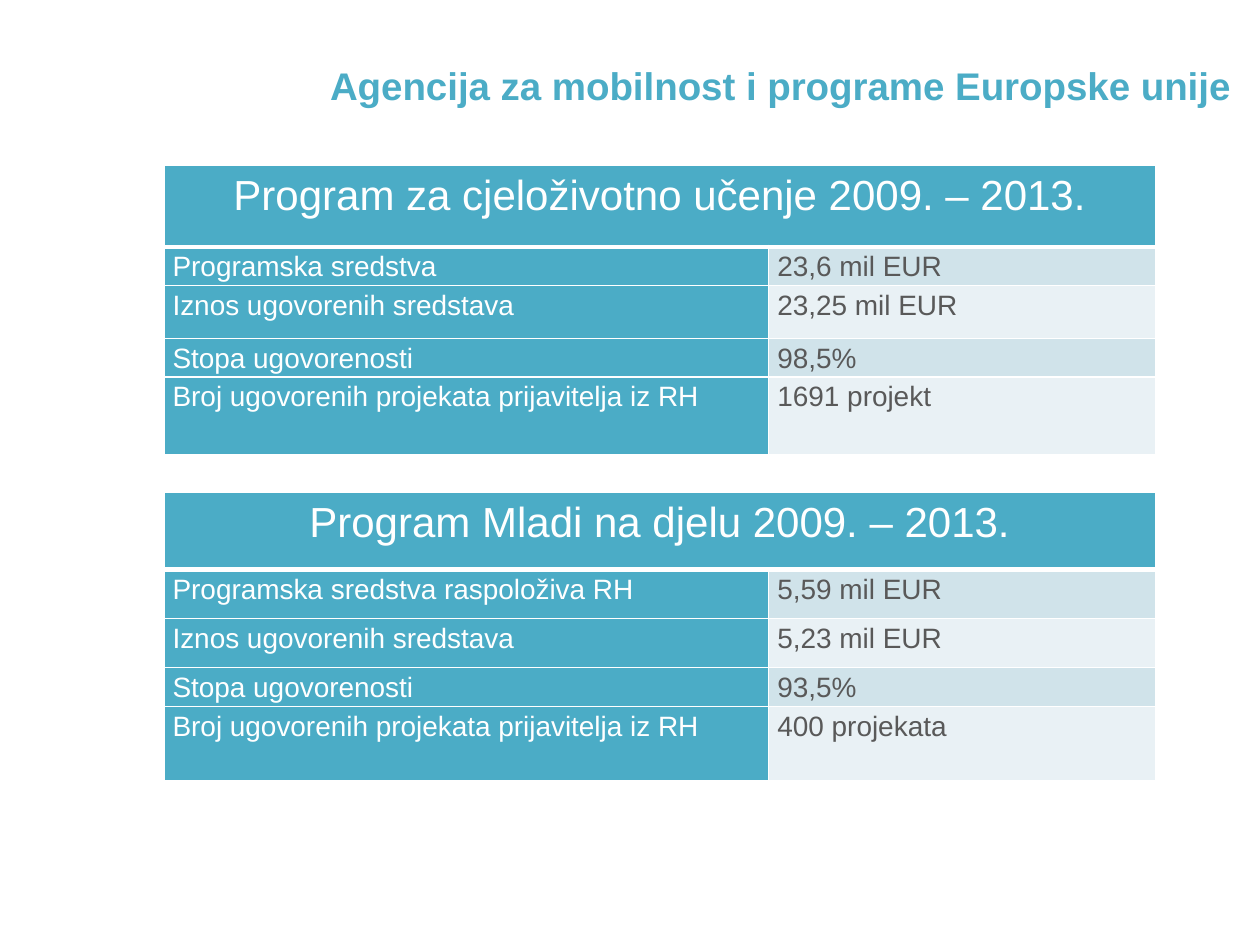
from lxml import etree
from pptx import Presentation
from pptx import util as u
from pptx.dml.color import RGBColor
from pptx.enum import text
from pptx.oxml.ns import qn

COLORS = {"teal": "4BACC6", "white": "FFFFFF", "gray": "595959",
          "band_dark": "D0E3EA", "band_light": "E9F1F5"}
FONT = "Arial"
COLUMN_WIDTHS = [4.8, 3.07]
TABLE_LEFT = 1.3

PROGRAMS = [
    {
        "title": "Program za cjeloživotno učenje 2009. – 2013.",
        "top": 1.31,
        "heights": [0.65, 0.26, 0.42, 0.26, 0.62],
        "rows": [
            ("Programska sredstva", "23,6 mil EUR"),
            ("Iznos ugovorenih sredstava", "23,25 mil EUR"),
            ("Stopa ugovorenosti", "98,5%"),
            ("Broj ugovorenih projekata prijavitelja iz RH", "1691 projekt"),
        ],
    },
    {
        "title": "Program Mladi na djelu 2009. – 2013.",
        "top": 3.91,
        "heights": [0.61, 0.39, 0.39, 0.23, 0.59],
        "rows": [
            ("Programska sredstva raspoloživa RH", "5,59 mil EUR"),
            ("Iznos ugovorenih sredstava", "5,23 mil EUR"),
            ("Stopa ugovorenosti", "93,5%"),
            ("Broj ugovorenih projekata prijavitelja iz RH", "400 projekata"),
        ],
    },
]


def color(name):
    return RGBColor.from_string(COLORS[name])


def style_paragraph(paragraph, size, color_name, alignment, bold=False):
    paragraph.alignment = alignment
    paragraph.font.name = FONT
    paragraph.font.size = u.Pt(size)
    paragraph.font.bold = bold
    paragraph.font.color.rgb = color(color_name)


def add_title(slide, content):
    shape = slide.shapes.add_textbox(u.Inches(0.11), u.Inches(0.44),
                                     u.Inches(9.76), u.Inches(0.55))
    frame = shape.text_frame
    frame.word_wrap = True
    frame.text = content
    style_paragraph(frame.paragraphs[0], 22, "teal", text.PP_ALIGN.RIGHT, bold=True)


def set_borders(cell, bottom_width=1):
    properties = cell._tc.get_or_add_tcPr()
    widths = {"a:lnL": 1, "a:lnR": 1, "a:lnT": 1, "a:lnB": bottom_width}
    for position, (tag, width) in enumerate(widths.items()):
        line = etree.Element(qn(tag), w=str(u.Pt(width)))
        fill = etree.SubElement(line, qn("a:solidFill"))
        etree.SubElement(fill, qn("a:srgbClr"), val=COLORS["white"])
        properties.insert(position, line)


def fill_cell(cell, content, fill, font_color, size=16,
              alignment=text.PP_ALIGN.JUSTIFY, bottom_width=1):
    cell.text = content
    cell.margin_left = cell.margin_right = u.Inches(0.07)
    cell.margin_top = cell.margin_bottom = 0
    cell.fill.solid()
    cell.fill.fore_color.rgb = color(fill)
    set_borders(cell, bottom_width)
    paragraph = cell.text_frame.paragraphs[0]
    paragraph.line_spacing = 1.15
    style_paragraph(paragraph, size, font_color, alignment)


def add_program_table(slide, program):
    heights = program["heights"]
    table = slide.shapes.add_table(
        len(heights), len(COLUMN_WIDTHS), u.Inches(TABLE_LEFT), u.Inches(program["top"]),
        u.Inches(sum(COLUMN_WIDTHS)), u.Inches(sum(heights))).table
    for column, width in zip(table.columns, COLUMN_WIDTHS):
        column.width = u.Inches(width)
    for row, height in zip(table.rows, heights):
        row.height = u.Inches(height)

    header = table.cell(0, 0)
    header.merge(table.cell(0, 1))
    fill_cell(header, program["title"], "teal", "white", size=24,
              alignment=text.PP_ALIGN.CENTER, bottom_width=3)
    for index, (label, value) in enumerate(program["rows"], start=1):
        band = "band_dark" if index % 2 else "band_light"
        fill_cell(table.cell(index, 0), label, "teal", "white")
        fill_cell(table.cell(index, 1), value, band, "gray")


def main():
    presentation = Presentation()
    presentation.slide_width = u.Inches(10)
    presentation.slide_height = u.Inches(7.5)
    slide = presentation.slides.add_slide(presentation.slide_layouts[6])
    add_title(slide, "Agencija za mobilnost i programe Europske unije")
    for program in PROGRAMS:
        add_program_table(slide, program)
    presentation.save("out.pptx")


if __name__ == "__main__":
    main()
